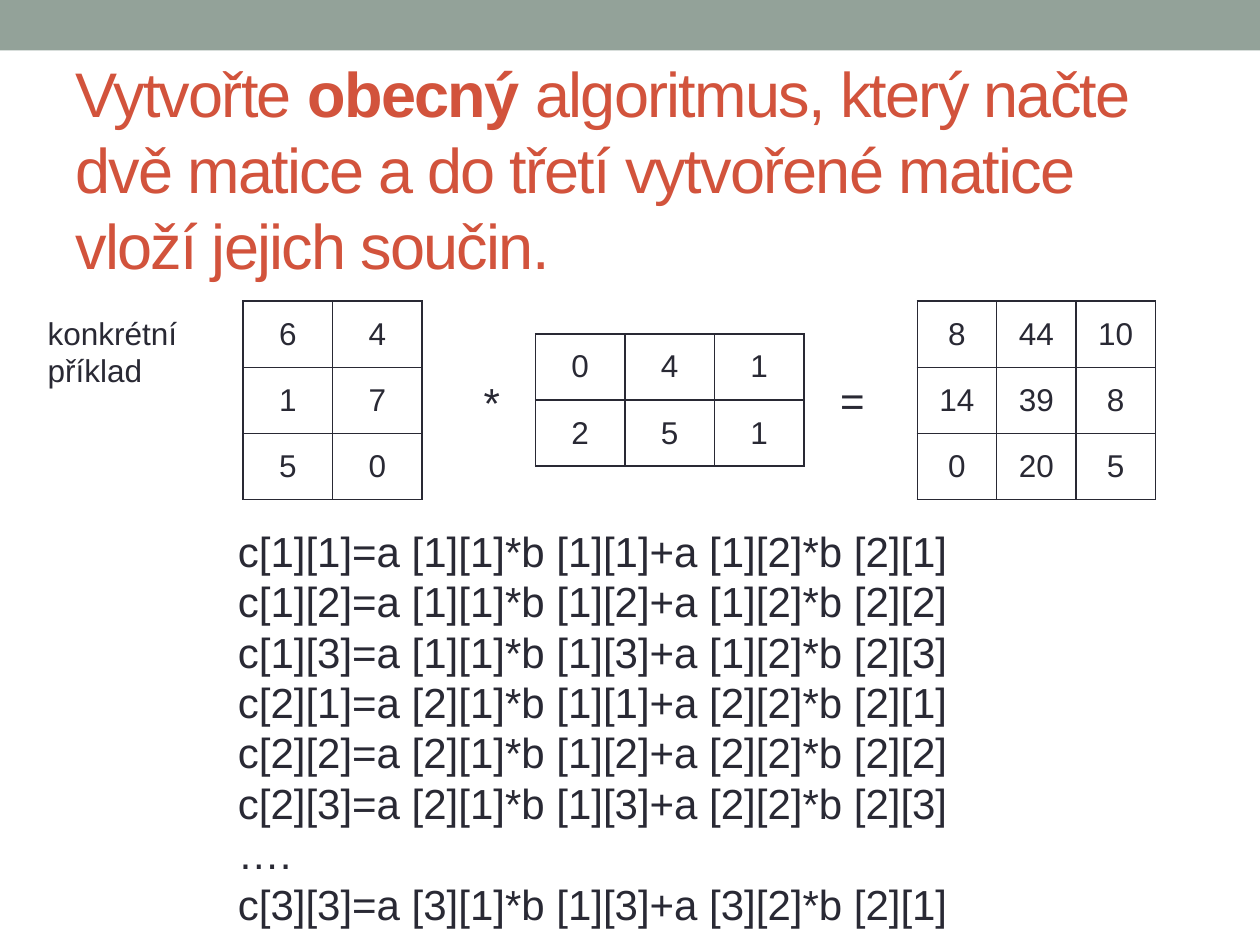
from dataclasses import dataclass

from lxml import etree
from pptx import Presentation
from pptx import util as u
from pptx.dml import color
from pptx.enum import shapes, text
from pptx.oxml import ns


@dataclass(frozen=True)
class Theme:
    """Colours, font and type sizes of the deck."""
    ink: str = "292934"
    accent: str = "D2533C"
    band: str = "93A299"
    font: str = "Arial"
    title: int = 36
    formula: int = 24
    body: int = 18
    border: float = 1


class SlideBuilder:
    """Draws styled elements on a slide divided into 100 columns and 75 rows."""

    def __init__(self, presentation, theme):
        self.theme = theme
        self.slide = presentation.slides.add_slide(presentation.slide_layouts[6])
        self.column = presentation.slide_width / 100
        self.row = presentation.slide_height / 75

    def place(self, left, top, width, height):
        return (round(left * self.column), round(top * self.row),
                round(width * self.column), round(height * self.row))

    def style(self, paragraph, size, colour):
        for run in paragraph.runs:
            run.font.name = self.theme.font
            run.font.size = u.Pt(size)
            run.font.color.rgb = color.RGBColor.from_string(colour)

    def band(self, *box):
        shape = self.slide.shapes.add_shape(shapes.MSO_SHAPE.RECTANGLE, *self.place(*box))
        shape.shadow.inherit = False
        shape.fill.solid()
        shape.fill.fore_color.rgb = color.RGBColor.from_string(self.theme.band)
        shape.line.fill.background()

    def title(self, parts, *box):
        frame = self.slide.shapes.add_textbox(*self.place(*box)).text_frame
        frame.word_wrap = True
        frame.vertical_anchor = text.MSO_ANCHOR.MIDDLE
        paragraph = frame.paragraphs[0]
        for words, bold in parts:
            run = paragraph.add_run()
            run.text = words
            run.font.bold = bold
            run.font._element.set("spc", "-100")
        self.style(paragraph, self.theme.title, self.theme.accent)

    def label(self, words, size, *box):
        frame = self.slide.shapes.add_textbox(*self.place(*box)).text_frame
        frame.word_wrap = True
        frame.text = words
        for paragraph in frame.paragraphs:
            self.style(paragraph, size, self.theme.ink)

    def outline(self, cell):
        properties = cell._tc.get_or_add_tcPr()
        for position, side in enumerate(("lnL", "lnR", "lnT", "lnB")):
            line = etree.Element(ns.qn(f"a:{side}"), w=str(u.Pt(self.theme.border)))
            fill = etree.SubElement(line, ns.qn("a:solidFill"))
            etree.SubElement(fill, ns.qn("a:srgbClr"), val=self.theme.ink)
            properties.insert(position, line)

    def matrix(self, values, left, top, cell_width, cell_height=5.25):
        rows, columns = len(values), len(values[0])
        box = self.place(left, top, columns * cell_width, rows * cell_height)
        table = self.slide.shapes.add_table(rows, columns, *box).table
        table.first_row = table.horz_banding = False
        for cell, value in zip(table.iter_cells(), sum(values, [])):
            cell.text = str(value)
            cell.vertical_anchor = text.MSO_ANCHOR.MIDDLE
            cell.fill.background()
            paragraph = cell.text_frame.paragraphs[0]
            paragraph.alignment = text.PP_ALIGN.CENTER
            self.style(paragraph, self.theme.body, self.theme.ink)
            self.outline(cell)


def product_line(row, column, last_column):
    return (f"c[{row}][{column}]=a [{row}][1]*b [1][{column}]"
            f"+a [{row}][2]*b [2][{last_column}]")


def main():
    presentation = Presentation()
    presentation.slide_width, presentation.slide_height = u.Inches(10), u.Inches(7.5)
    theme = Theme()
    builder = SlideBuilder(presentation, theme)

    builder.band(0, 0, 100, 4)
    builder.title([("Vytvořte ", False), ("obecný", True),
                   (" algoritmus, který načte dvě matice a do třetí vytvořené matice "
                    "vloží jejich součin.", False)], 5, 5.8, 90, 15.1)

    builder.matrix([[6, 4], [1, 7], [5, 0]], 19.3, 23.9, 7.1)
    builder.matrix([[0, 4, 1], [2, 5, 1]], 42.5, 26.5, 7.1)
    builder.matrix([[8, 44, 10], [14, 39, 8], [0, 20, 5]], 72.8, 23.9, 6.3)
    builder.label("*", theme.formula, 37.4, 29.4, 3.1, 5)
    builder.label("=", theme.formula, 65.7, 29.2, 3.1, 5)

    lines = [product_line(row, column, column) for row in (1, 2) for column in (1, 2, 3)]
    lines += ["….", product_line(3, 3, 1)]
    builder.label("\n".join(lines), theme.formula, 17.9, 41.2, 60.3, 33.3)
    builder.label("konkrétní\vpříklad", theme.body, 2.8, 24.4, 13.4, 7.1)

    presentation.save("out.pptx")


if __name__ == "__main__":
    main()
